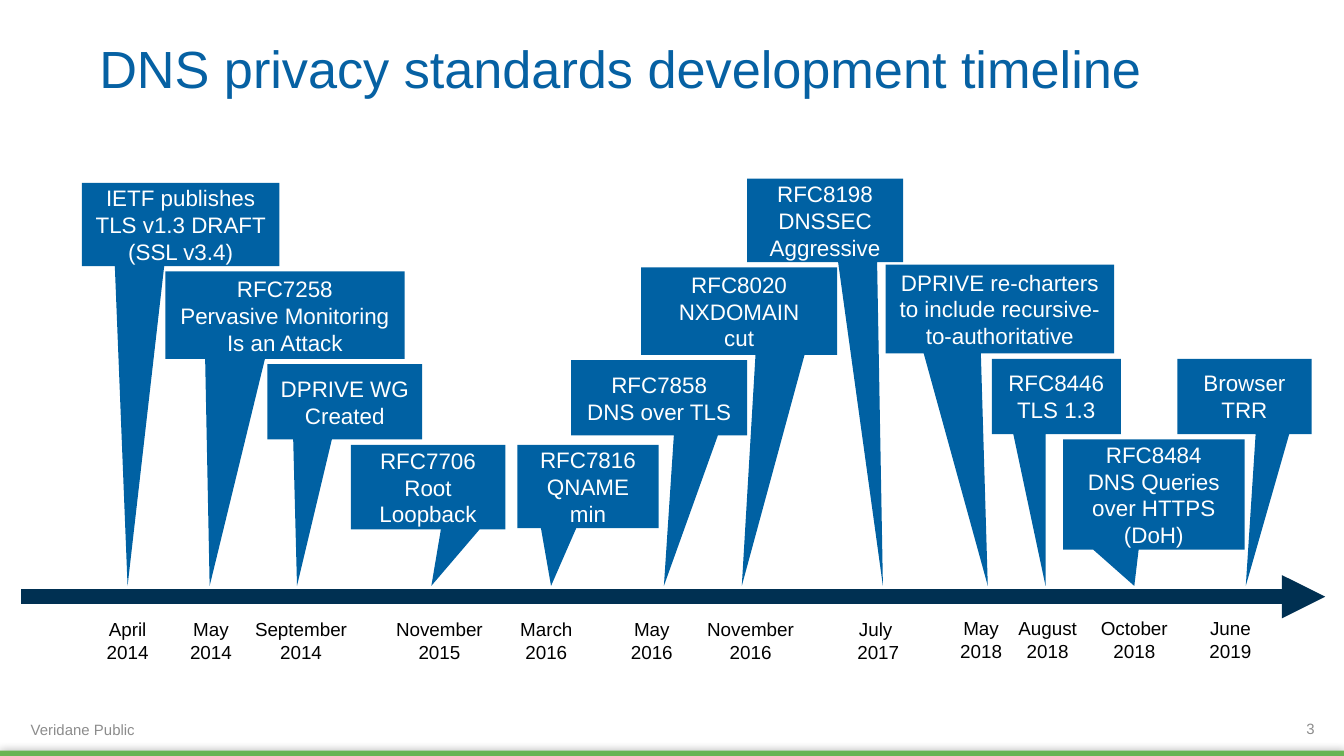
import pptx
import pptx.util
import pptx.dml.color
import pptx.enum.shapes
import pptx.enum.text
import pptx.oxml
import pptx.oxml.ns
from lxml import etree

BLUE, NAVY, GREEN, GRAY = "0061A3", "003052", "69B453", "8C8C8C"
UNIT = pptx.util.Inches(1)  # one column or row of the grid
WIDTH = 10
HEIGHT = WIDTH * 9 / 16
ALIGN = pptx.enum.text.PP_ALIGN
ANCHOR = pptx.enum.text.MSO_ANCHOR
SHAPE = pptx.enum.shapes.MSO_SHAPE

# Left, top, width, height in the timeline box, column of the tip, text
EVENTS = [
    (0.61, 0.06, 1.47, 0.62, 0.95, "IETF publishes TLS v1.3 DRAFT (SSL v3.4)"),
    (1.23, 0.72, 1.78, 0.65, 1.56, "RFC7258\nPervasive Monitoring Is an Attack"),
    (1.99, 1.41, 1.15, 0.56, 2.21, "DPRIVE WG Created"),
    (2.61, 2.01, 1.15, 0.63, 3.21, "RFC7706\nRoot Loopback"),
    (3.85, 2.01, 1.05, 0.62, 4.10, "RFC7816\nQNAME min"),
    (4.25, 1.38, 1.31, 0.56, 4.94, "RFC7858\nDNS over TLS"),
    (4.77, 0.69, 1.46, 0.65, 5.52, "RFC8020\nNXDOMAIN\ncut"),
    (5.56, 0.03, 1.16, 0.62, 6.57, "RFC8198\nDNSSEC Aggressive"),
    (6.59, 0.67, 1.70, 0.66, 7.35, "DPRIVE re-charters to include recursive-to-authoritative"),
    (7.38, 1.37, 0.96, 0.56, 7.78, "RFC8446\nTLS 1.3"),
    (7.91, 1.97, 1.35, 0.82, 8.44, "RFC8484\nDNS Queries over HTTPS (DoH)"),
    (8.76, 1.37, 1.00, 0.56, 9.27, "Browser TRR"),
]

# Left, top, width in the timeline box, text
DATES = [
    (0.67, 3.25, 0.56, "April\n2014"), (1.29, 3.25, 0.56, "May 2014"),
    (1.79, 3.25, 0.90, "September 2014"), (2.82, 3.25, 0.90, "November 2015"),
    (3.76, 3.25, 0.61, "March 2016"), (4.57, 3.25, 0.56, "May 2016"),
    (5.15, 3.25, 0.87, "November 2016"), (6.10, 3.25, 0.87, "July \n2017"),
    (7.02, 3.24, 0.56, "May 2018"), (7.45, 3.24, 0.69, "August 2018"),
    (8.07, 3.24, 0.74, "October 2018"), (8.81, 3.24, 0.69, "June 2019"),
]


def color(value):
    return pptx.dml.color.RGBColor.from_string(value)


def grid(*lengths):
    return [round(length * UNIT) for length in lengths]


def write(shape, text, size, hue, align, anchor=ANCHOR.MIDDLE):
    frame = shape.text_frame
    frame.word_wrap = True
    frame.vertical_anchor = anchor
    # Centred text fits tightly, so it gets slightly narrower margins
    margin = pptx.util.Inches(0.09 if align == ALIGN.CENTER else 0.1)
    frame.margin_left = frame.margin_right = margin
    frame.text = text
    for para in frame.paragraphs:
        para.alignment = align
        para.font.name = "Arial"
        para.font.size = pptx.util.Pt(size)
        para.font.color.rgb = color(hue)


def add_text(page, box, *style):
    write(page.shapes.add_textbox(*grid(*box)), *style)


def add_block(page, kind, box, fill):
    block = page.shapes.add_shape(kind, *grid(*box))
    block.shadow.inherit = False
    block.fill.solid()
    block.fill.fore_color.rgb = color(fill)
    block.line.fill.background()
    return block


def add_shadow(block, blur, opacity):
    qn = pptx.oxml.ns.qn
    effects = block._element.spPr.find(qn("a:effectLst"))
    shadow = etree.SubElement(effects, qn("a:outerShdw"),
                              blurRad=str(pptx.util.Pt(blur)), dist="0", dir="0")
    black = etree.SubElement(shadow, qn("a:srgbClr"), val="000000")
    etree.SubElement(black, qn("a:alpha"), val=str(opacity * 1000))


def add_arrow(page, left, right, row):
    arrow = page.shapes.add_connector(
        pptx.enum.shapes.MSO_CONNECTOR.STRAIGHT, *grid(left, row, right, row))
    arrow.line.color.rgb = color(NAVY)
    arrow.line.width = pptx.util.Pt(7.75)
    etree.SubElement(arrow.line._get_or_add_ln(),
                     pptx.oxml.ns.qn("a:tailEnd"), type="triangle")
    etree.SubElement(arrow._element.spPr, pptx.oxml.ns.qn("a:effectLst"))


def timeline(page, box):
    x, y, width, height = box
    axis, tip_row = y + 3.14, y + 3.06
    add_arrow(page, x + 0.16, x + width - 0.14, axis)

    # Callouts whose tips all meet the axis
    for left, top, wide, high, tip, text in EVENTS:
        callout = add_block(page, SHAPE.RECTANGULAR_CALLOUT,
                            (x + left, y + top, wide, high), BLUE)
        callout.adjustments[0] = (tip - left - wide / 2) / wide
        callout.adjustments[1] = (tip_row - y - top - high / 2) / high
        write(callout, text, 12, "FFFFFF", ALIGN.CENTER)

    # Dates under the axis
    for left, top, wide, text in DATES:
        add_text(page, (x + left, y + top, wide, 0.44), text, 10.1, "000000",
                 ALIGN.CENTER, ANCHOR.TOP)


def footer(page, box):
    x, y, width, height = box
    bar = add_block(page, SHAPE.RECTANGLE, (x, y + height - 0.04, width, 0.04), GREEN)
    add_shadow(bar, 5, 40)
    add_text(page, (x + 0.13, y, 3.32, 0.15), "Veridane Public", 8, GRAY, ALIGN.LEFT)
    add_text(page, (x + width - 0.51, y + 0.01, 0.39, 0.12), "3", 8, GRAY, ALIGN.RIGHT)


def main():
    deck = pptx.Presentation()
    deck.slide_width, deck.slide_height = grid(WIDTH, HEIGHT)
    page = deck.slides.add_slide(deck.slide_layouts[6])
    add_text(page, (0.64, -0.04, 8.62, 1.09),
             "DNS privacy standards development timeline", 28, "0661A3", ALIGN.LEFT)
    timeline(page, (0, 1.3, WIDTH, 3.7))
    footer(page, (0, 5.35, WIDTH, HEIGHT - 5.35))
    deck.save("out.pptx")


if __name__ == "__main__":
    main()
